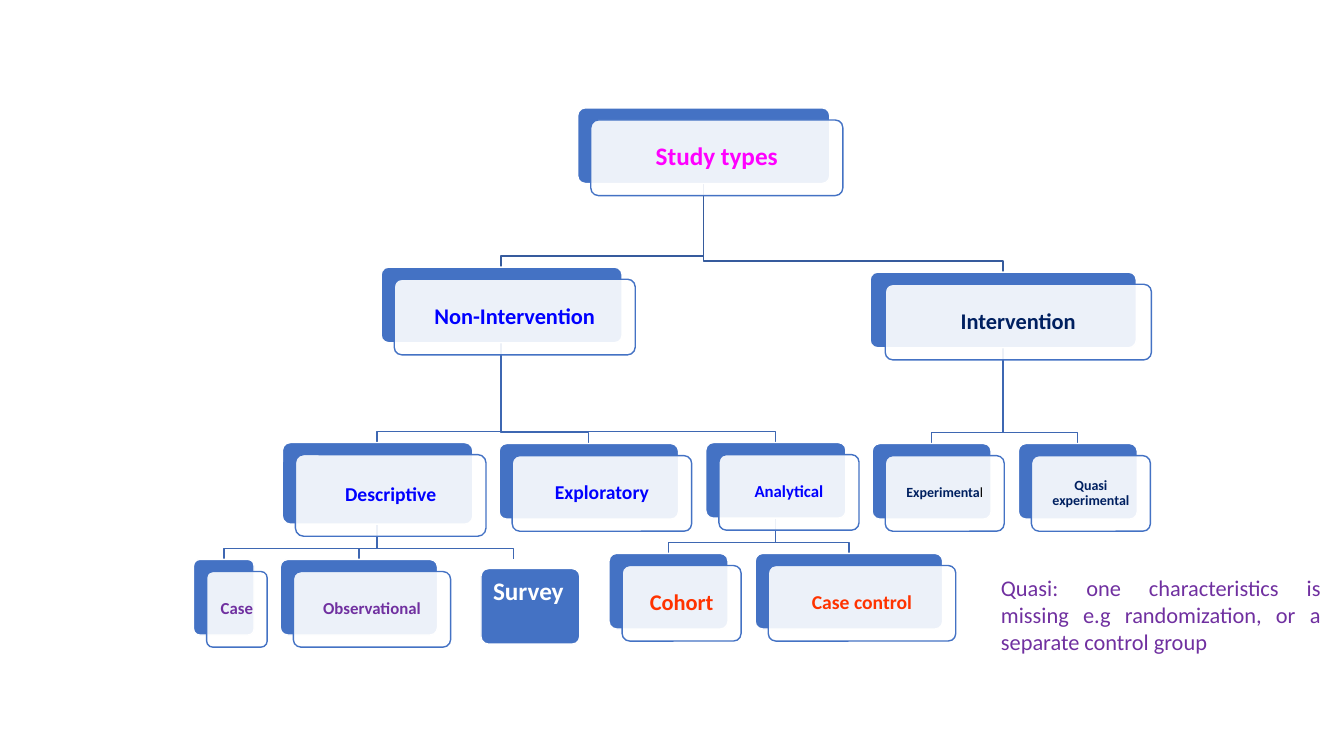
"""Build a one-slide tree chart of study types."""
from lxml import etree
from pptx import Presentation
from pptx.dml.color import RGBColor
from pptx.enum.shapes import MSO_SHAPE as Shape
from pptx.enum.text import MSO_ANCHOR as Anchor, PP_ALIGN as Align
from pptx.oxml.ns import qn
from pptx.util import Pt

PX = 9144
BLUE, WHITE = "4472C4", "FFFFFF"


def rgb(code):
    return RGBColor.from_string(code)


def card(x, y, w, h, fill, edge):
    box = slide.shapes.add_shape(
        Shape.ROUNDED_RECTANGLE, x * PX, y * PX, w * PX, h * PX)
    box.adjustments[0] = 0.1
    box.shadow.inherit = False
    box.fill.solid()
    box.fill.fore_color.rgb = rgb(fill)
    box.line.color.rgb = rgb(edge)
    box.line.width = Pt(1)
    return box


deck = Presentation()
deck.slide_width, deck.slide_height = 1333 * PX, 750 * PX
slide = deck.slides.add_slide(deck.slide_layouts[6])

nodes = {
    "Study types": (573, 107, 250, 75, 18, "FF00FF", None),
    "Non-Intervention": (378, 265, 239, 75, 16, "0000FF", "Study types"),
    "Descriptive": (280, 439, 189, 81, 14, "0000FF", "Non-Intervention"),
    "Case": (192, 555, 60, 75, 12, "7030A0", "Descriptive"),
    "Observational": (278, 555, 156, 75, 12, "7030A0", "Descriptive"),
    "Exploratory": (495, 440, 178, 75, 14, "0000FF", "Non-Intervention"),
    "Analytical": (700, 439, 139, 75, 12, "0000FF", "Non-Intervention"),
    "Cohort": (604, 549, 118, 75, 16, "FF3300", "Analytical"),
    "Case control": (749, 549, 186, 75, 14, "FF3300", "Analytical"),
    "Intervention": (863, 270, 264, 75, 16, "002060", "Study types"),
    "Experimental": (865, 440, 118, 75, 10, "002060", "Intervention"),
    "Quasi experimental": (1010, 440, 118, 75, 10, "002060", "Intervention"),
}

links = [(node[6], node[0] + node[2] // 2, node[1])
         for node in nodes.values() if node[6]]
links.append(("Descriptive", 509, 555))
for parent, end, top in links:
    x, y, w, h = nodes[parent][:4]
    mid, bar = x + w // 2, top - 11
    path = slide.shapes.build_freeform(mid, y + h, PX)
    path.add_line_segments([(mid, bar), (end, bar), (end, top)], close=False)
    line = path.convert_to_shape()
    line.shadow.inherit = False
    line.fill.background()
    line.line.width = Pt(1)
    line.line.color.rgb = rgb("365B9D" if parent == "Study types" else "3E67B2")

for name, (x, y, w, h, size, color, parent) in nodes.items():
    card(x, y, w, h, BLUE, WHITE)
    shift = 15 if name == "Intervention" else 13
    face = card(x + shift, y + 12, w, h, WHITE, BLUE)
    tint = face.fill._xPr.find(qn("a:solidFill"))[0]
    etree.SubElement(tint, qn("a:alpha"), val="90000")
    frame = face.text_frame
    frame.word_wrap = True
    frame.vertical_anchor = Anchor.MIDDLE
    pad = (2 + round(size * 0.4)) * PX
    frame.margin_left = frame.margin_right = pad
    frame.margin_top = frame.margin_bottom = pad
    para = frame.paragraphs[0]
    para.alignment = Align.CENTER
    para.line_spacing = 0.9
    para.font.name, para.font.size = "Calibri", Pt(size)
    parts = [("Experimenta", True, color), ("l", False, "000000")]
    if name != "Experimental":
        parts = [(name, True, color)]
    for text, bold, ink in parts:
        run = para.add_run()
        run.text = text
        run.font.bold = bold
        run.font.color.rgb = rgb(ink)

survey = card(477, 564, 98, 75, BLUE, WHITE)
note = slide.shapes.add_textbox(983 * PX, 565 * PX, 337 * PX, 91 * PX)
remark = ("Quasi: one characteristics is missing e.g randomization, "
          "or a separate control group")
for box, text, size, bold, ink, align in [
        (survey, "Survey", 18, True, WHITE, Align.LEFT),
        (note, remark, 16, False, "7030A0", Align.JUSTIFY)]:
    frame = box.text_frame
    frame.word_wrap = True
    frame.vertical_anchor = Anchor.TOP
    para = frame.paragraphs[0]
    para.text = text
    para.alignment = align
    para.font.name, para.font.size = "Calibri", Pt(size)
    para.font.bold = bold
    para.font.color.rgb = rgb(ink)

deck.save("out.pptx")
